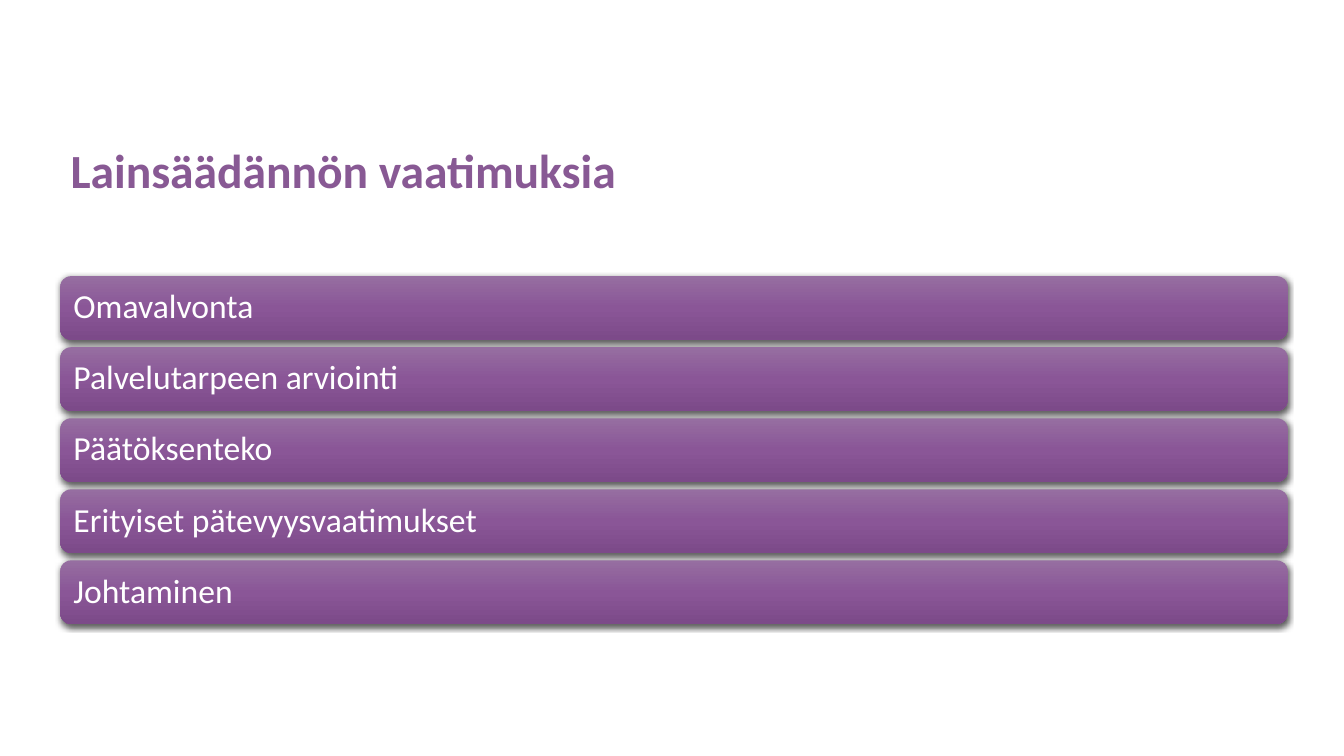
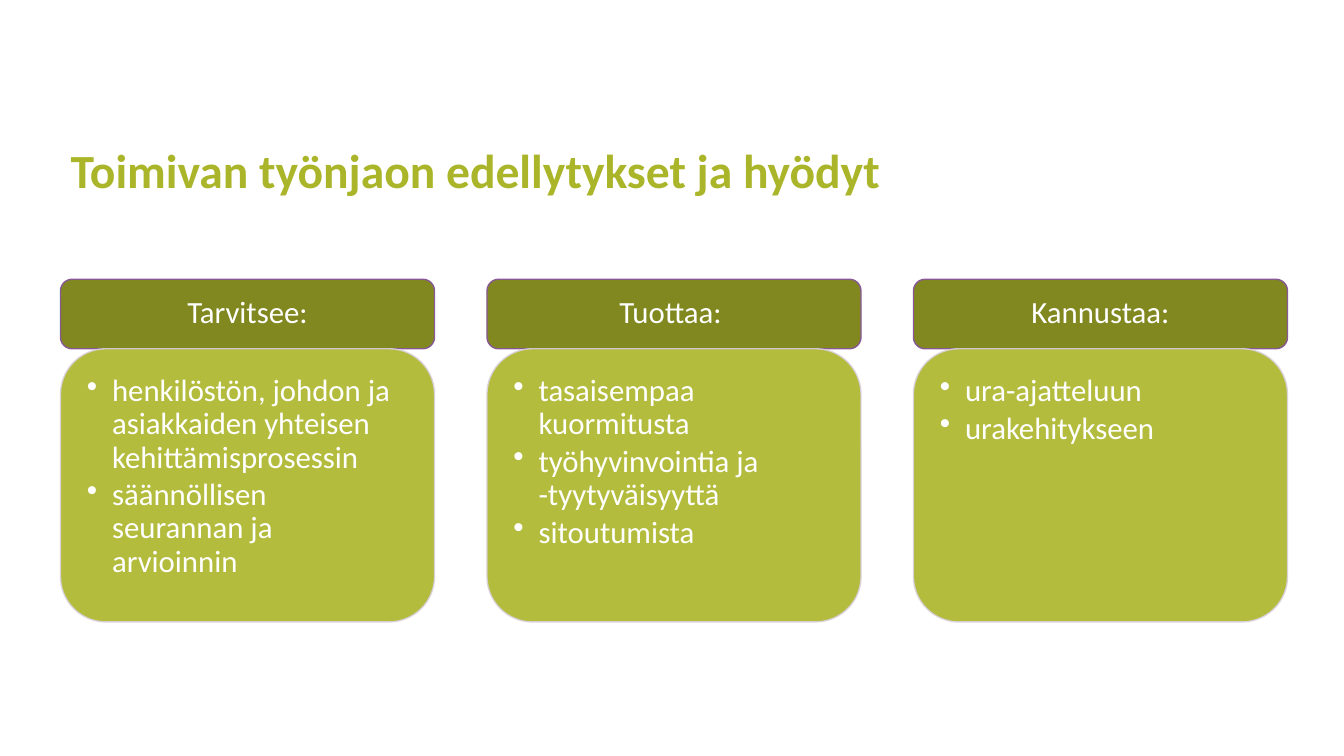
from copy import deepcopy

from lxml import etree
from pptx import Presentation
from pptx.dml.color import RGBColor
from pptx.enum.shapes import MSO_SHAPE as SHAPE
from pptx.enum.text import MSO_ANCHOR as ANCHOR, PP_ALIGN as ALIGN
from pptx.oxml.ns import qn
from pptx.util import Inches, Pt

FONT = "Calibri"
WHITE, PURPLE, LIME, OLIVE, PALE = "FFFFFF", "885994", "ABB529", "80881F", "DAD1DC"
BAR_STOPS = ((0, "966EA1"), (0.5, "8A5697"), (1, "7C4A89"))

SLIDE_W, SLIDE_H = 13.33, 7.5
LEFT, WIDTH = 0.6, 12.17
TITLE_BOX = (LEFT, 0.99, WIDTH, 1.45)
LIST_BOX = (LEFT, 2.74, WIDTH, 3.45)
COLUMNS_BOX = (LEFT, 2.77, WIDTH, 3.4)


def rgb(color):
    return RGBColor.from_string(color)


def child(parent, tag, **attrs):
    return etree.SubElement(parent, qn(tag), {k: str(v) for k, v in attrs.items()})


def add_bullet(p, indent=0.25):
    pPr = p._p.get_or_add_pPr()
    pPr.set("marL", str(Inches(indent)))
    pPr.set("indent", str(-Inches(indent)))
    child(pPr, "a:buChar", char="•")


def write(sp, text, size=24, color=WHITE, bold=False, align=ALIGN.LEFT,
          anchor=ANCHOR.MIDDLE, insets=None, bullets=False, after=0):
    tf = sp.text_frame
    tf.word_wrap = True
    tf.vertical_anchor = anchor
    if insets:
        (tf.margin_left, tf.margin_top,
         tf.margin_right, tf.margin_bottom) = map(Inches, insets)
    lines = [text] if isinstance(text, str) else text
    for i, line in enumerate(lines):
        p = tf.paragraphs[0] if i == 0 else tf.add_paragraph()
        p.alignment = align
        p.line_spacing = 0.9
        p.space_before = Pt(0)
        p.space_after = Pt(after)
        if bullets:
            add_bullet(p)
        r = p.add_run()
        r.text = line
        r.font.name, r.font.size, r.font.bold = FONT, Pt(size), bold
        r.font.color.rgb = rgb(color)


def add_box(slide, kind, box, fill=None, line=None):
    sp = slide.shapes.add_shape(kind, *map(Inches, box))
    sp.shadow.inherit = False
    if fill:
        sp.fill.solid()
        sp.fill.fore_color.rgb = rgb(fill)
    if line:
        sp.line.color.rgb = rgb(line)
        sp.line.width = Pt(1)
    else:
        sp.line.fill.background()
    return sp


def fill_gradient(sp, stops):
    sp.fill.gradient()
    sp.fill.gradient_angle = 270
    stop_list = sp._element.spPr.find(".//" + qn("a:gsLst"))
    while len(stop_list) < len(stops):
        stop_list.append(deepcopy(stop_list[-1]))
    for stop, (position, color) in zip(sp.fill.gradient_stops, stops):
        stop.position = position
        stop.color.rgb = rgb(color)


def add_shadow(sp):
    effects = sp._element.spPr.find(qn("a:effectLst"))
    shadow = child(effects, "a:outerShdw", blurRad=Pt(4.5), dist=Pt(1.5),
                   dir=5400000, rotWithShape=0)
    child(child(shadow, "a:srgbClr", val="000000"), "a:alpha", val=63000)


def set_alpha(sp, percent):
    for color in sp._element.spPr.iter(qn("a:srgbClr")):
        child(color, "a:alpha", val=percent * 1000)


def add_slide(prs, title, color):
    slide = prs.slides.add_slide(prs.slide_layouts[5])
    sp = slide.shapes.title
    sp.left, sp.top, sp.width, sp.height = map(Inches, TITLE_BOX)
    write(sp, title, size=34, color=color, bold=True)
    return slide


def add_bar_list(slide, box, items, gap=0.075):
    x, y, w, h = box
    bar_h = (h - gap * (len(items) - 1)) / len(items)
    for i, item in enumerate(items):
        sp = add_box(slide, SHAPE.ROUNDED_RECTANGLE,
                     (x, y + i * (bar_h + gap), w, bar_h))
        fill_gradient(sp, BAR_STOPS)
        add_shadow(sp)
        write(sp, item, insets=(0.1, 0.1, 0.1, 0.1))


def add_column(slide, box, heading, items, head_h=0.69):
    x, y, w, h = box
    kind = SHAPE.FLOWCHART_ALTERNATE_PROCESS
    head = add_box(slide, kind, (x, y, w, head_h), OLIVE, PURPLE)
    write(head, heading, size=22, align=ALIGN.CENTER, insets=(0.17, 0.1, 0.17, 0.1))
    body = add_box(slide, kind, (x, y + head_h, w, h - head_h), LIME, PALE)
    set_alpha(body, 90)
    write(body, items, size=22, anchor=ANCHOR.TOP, bullets=True, after=3,
          insets=(0.13, 0.13, 0.17, 0.19))


def add_columns(slide, box, columns, gap=0.52):
    x, y, w, h = box
    col_w = (w - gap * (len(columns) - 1)) / len(columns)
    for i, (heading, items) in enumerate(columns):
        add_column(slide, (x + i * (col_w + gap), y, col_w, h), heading, items)


def main():
    prs = Presentation()
    prs.slide_width, prs.slide_height = Inches(SLIDE_W), Inches(SLIDE_H)

    slide = add_slide(prs, "Lainsäädännön vaatimuksia", PURPLE)
    add_bar_list(slide, LIST_BOX, [
        "Omavalvonta",
        "Palvelutarpeen arviointi",
        "Päätöksenteko",
        "Erityiset pätevyysvaatimukset",
        "Johtaminen",
    ])

    slide = add_slide(prs, "Toimivan työnjaon edellytykset ja hyödyt", LIME)
    add_columns(slide, COLUMNS_BOX, [
        ("Tarvitsee:", ["henkilöstön, johdon ja asiakkaiden yhteisen kehittämisprosessin",
                        "säännöllisen seurannan ja arvioinnin"]),
        ("Tuottaa: ", ["tasaisempaa kuormitusta",
                       "työhyvinvointia ja -tyytyväisyyttä",
                       "sitoutumista"]),
        ("Kannustaa:", ["ura-ajatteluun", "urakehitykseen"]),
    ])

    prs.save("out.pptx")


if __name__ == "__main__":
    main()
